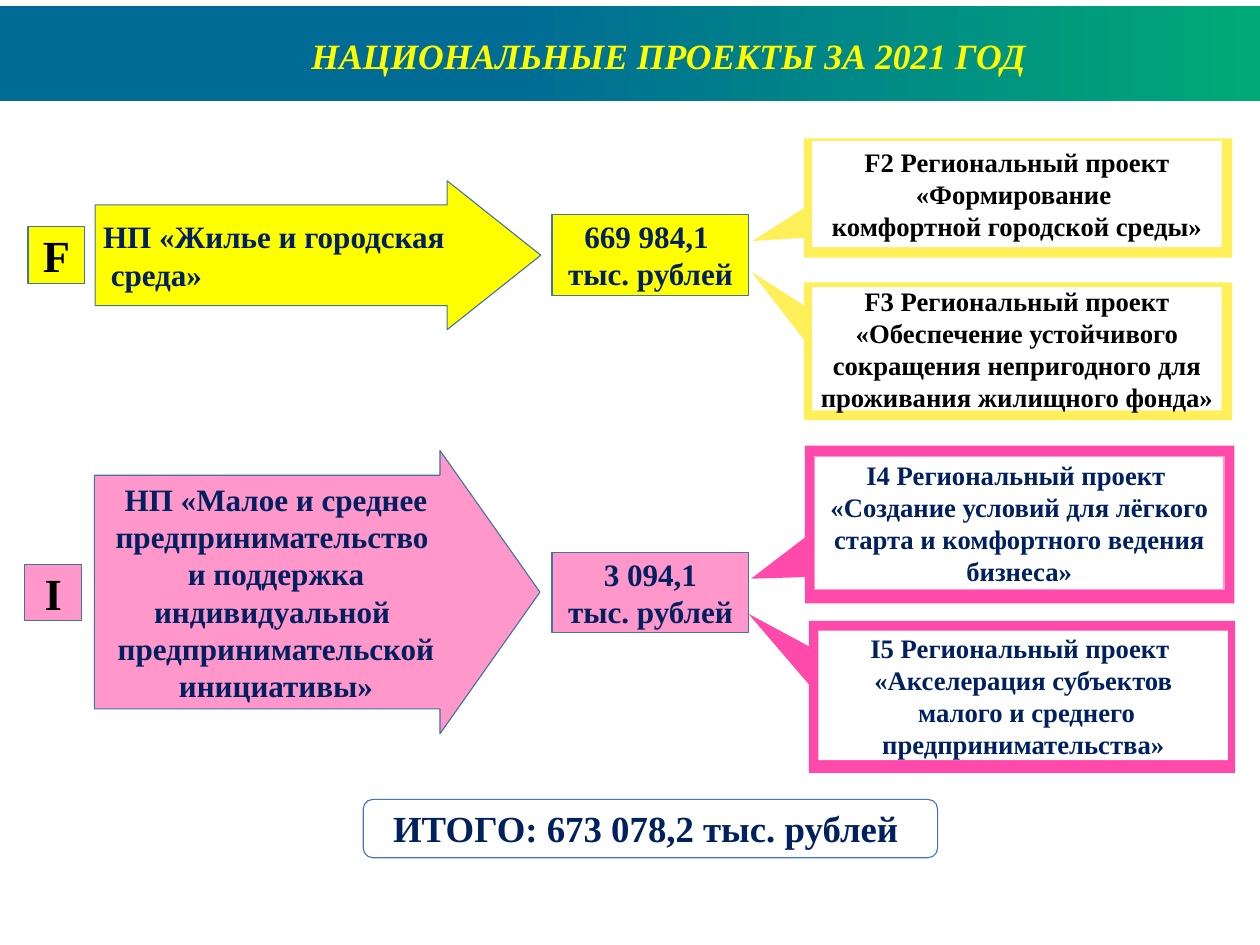
from pptx import Presentation
from pptx.dml.color import RGBColor
from pptx.enum import shapes, text
from pptx.util import Inches, Pt

YELLOW = RGBColor(0xFF, 0xFF, 0x00)
SAND = RGBColor(0xFF, 0xF0, 0x5A)
PINK = RGBColor(0xFF, 0x97, 0xCB)
MAGENTA = RGBColor(0xFF, 0x4A, 0xAB)
NAVY = RGBColor(0x00, 0x20, 0x60)
BLACK = RGBColor(0x00, 0x00, 0x00)
WHITE = RGBColor(0xFF, 0xFF, 0xFF)
OUTLINE = RGBColor(0x43, 0x73, 0x9E)
BLUE = RGBColor(0x44, 0x72, 0xC4)
BANNER_STOPS = [(0.4, RGBColor(0x00, 0x6C, 0x95)), (1, RGBColor(0x00, 0xA9, 0x76))]

KIND = shapes.MSO_SHAPE
CENTER, LEFT = text.PP_ALIGN.CENTER, text.PP_ALIGN.LEFT
MIDDLE, TOP = text.MSO_ANCHOR.MIDDLE, text.MSO_ANCHOR.TOP
FONT = "Times New Roman"

TITLE = "НАЦИОНАЛЬНЫЕ ПРОЕКТЫ ЗА 2021 ГОД"
TOTAL = "ИТОГО: 673 078,2 тыс. рублей "

PROJECTS = [
    {
        "fill": YELLOW, "frame": SAND, "ink": BLACK,
        "code": ("F", (0.35, 2.83, 0.71, 0.71)),
        "arrow": (["НП «Жилье и городская", " среда»"],
                  (1.19, 2.26, 5.57, 1.86), (0.677, 0.629), LEFT),
        "sum": ("669 984,1 \vтыс. рублей", (6.9, 2.68, 2.46, 1.01)),
        "regional": [
            (["F2 Региональный проект «Формирование ", "комфортной городской среды»"],
             (10.05, 1.73, 5.35, 1.49), (-0.621, 0.361),
             (10.15, 1.76, 5.12, 1.33), None),
            (["F3 Региональный проект «Обеспечение устойчивого сокращения "
              "непригодного для проживания жилищного фонда»"],
             (10.05, 3.53, 5.35, 1.72), (-0.623, -0.577),
             (10.15, 3.59, 5.12, 1.54), None),
        ],
    },
    {
        "fill": PINK, "frame": MAGENTA, "ink": NAVY,
        "code": ("I", (0.31, 7.05, 0.71, 0.71)),
        "arrow": (["НП «Малое и среднее предпринимательство ",
                   "и поддержка индивидуальной ",
                   "предпринимательской инициативы»"],
                  (1.18, 5.63, 5.57, 3.54), (0.825, 0.353), CENTER),
        "sum": ("3 094,1\vтыс. рублей", (6.9, 6.91, 2.46, 0.99)),
        "regional": [
            (["I4 Региональный проект ",
              "«Создание условий для лёгкого старта и комфортного ведения бизнеса»"],
             (10.06, 5.57, 5.37, 1.97), (-0.625, 0.344),
             (10.18, 5.7, 5.12, 1.67), PINK),
            (["I5 Региональный проект ", "«Акселерация субъектов",
              " малого и среднего предпринимательства»"],
             (10.11, 7.76, 5.33, 1.9), (-0.642, -0.548),
             (10.23, 7.88, 5.12, 1.62), None),
        ],
    },
]

presentation = Presentation()
presentation.slide_width, presentation.slide_height = Inches(15.75), Inches(11.81)
slide = presentation.slides.add_slide(presentation.slide_layouts[6])


def add_box(kind, place, fill=None, line=None, adjustments=()):
    shape = slide.shapes.add_shape(kind, *map(Inches, place))
    shape.shadow.inherit = False
    for index, value in enumerate(adjustments):
        shape.adjustments[index] = value
    if fill is not None:
        shape.fill.solid()
        shape.fill.fore_color.rgb = fill
    if line is None:
        shape.line.fill.background()
    else:
        shape.line.color.rgb = line
        shape.line.width = Pt(1)
    return shape


def write(shape, lines, size, color, align=CENTER, anchor=MIDDLE, italic=False):
    frame = shape.text_frame
    frame.word_wrap = True
    frame.vertical_anchor = anchor
    font_format = {"name": FONT, "size": Pt(size), "bold": True, "italic": italic}
    for index, line in enumerate(lines):
        paragraph = frame.add_paragraph() if index else frame.paragraphs[0]
        paragraph.text = line
        paragraph.alignment = align
        for run in paragraph.runs:
            for name, value in font_format.items():
                setattr(run.font, name, value)
            run.font.color.rgb = color


banner = add_box(KIND.RECTANGLE, (0, 0.08, 15.75, 1.18))
banner.fill.gradient()
banner.fill.gradient_angle = 0
for stop, (position, color) in zip(banner.fill.gradient_stops, BANNER_STOPS):
    stop.position = position
    stop.color.rgb = color

title = slide.shapes.add_textbox(*map(Inches, (0.98, 0.37, 14.76, 0.64)))
write(title, [TITLE], 32, YELLOW, anchor=TOP, italic=True)

for project in PROJECTS:
    fill = project["fill"]
    for key, size, ink in (("code", 40, BLACK), ("sum", 28, NAVY)):
        label, place = project[key]
        write(add_box(KIND.RECTANGLE, place, fill, OUTLINE), [label], size, ink)
    lines, place, adjustments, align = project["arrow"]
    arrow = add_box(KIND.RIGHT_ARROW, place, fill, OUTLINE, adjustments)
    write(arrow, lines, 28, NAVY, align)
    for lines, callout, tip, panel, line in project["regional"]:
        add_box(KIND.RECTANGULAR_CALLOUT, callout, project["frame"], adjustments=tip)
        write(add_box(KIND.RECTANGLE, panel, WHITE, line), lines, 24, project["ink"])

total = add_box(KIND.ROUNDED_RECTANGLE, (4.54, 9.99, 7.18, 0.73), WHITE, BLUE)
write(total, [TOTAL], 33.1, NAVY, anchor=TOP)

presentation.save("out.pptx")
